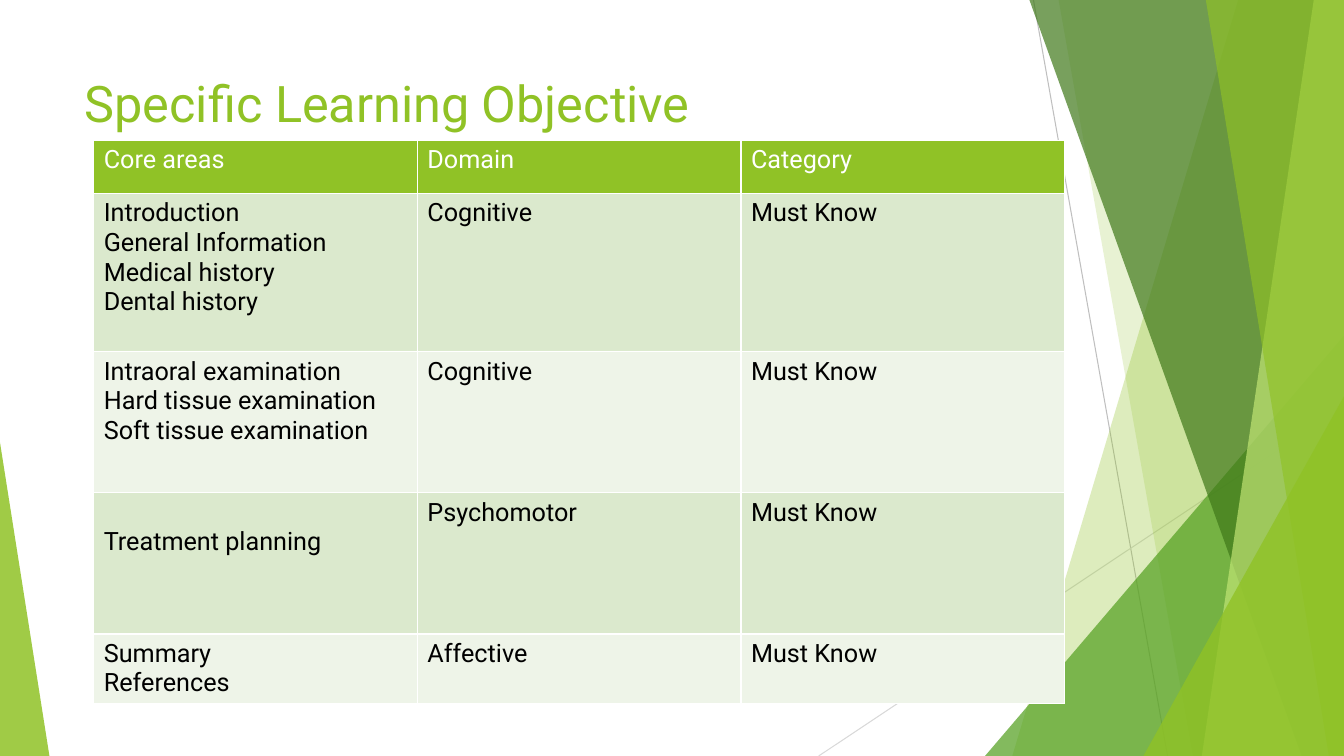
import pptx
import pptx.util
import pptx.dml.color
import pptx.enum.shapes
import pptx.enum.text
import pptx.oxml.ns
import lxml.etree

Inches = pptx.util.Inches
Pt = pptx.util.Pt
WIDTH, HEIGHT = 13.33, 7.5
GREEN, FONT = "90C226", "Roboto"


def color(value):
    return pptx.dml.color.RGBColor.from_string(value)


def paint(facet, fill, opacity):
    facet.shadow.inherit = False
    facet.fill.solid()
    facet.fill.fore_color.rgb = color(fill)
    facet.line.fill.background()
    tint = facet.fill._xPr.find(".//" + pptx.oxml.ns.qn("a:srgbClr"))
    alpha = lxml.etree.SubElement(tint, pptx.oxml.ns.qn("a:alpha"))
    alpha.set("val", str(opacity * 1000))


deck = pptx.Presentation()
deck.slide_width, deck.slide_height = Inches(WIDTH), Inches(HEIGHT)
slide = deck.slides.add_slide(deck.slide_layouts[5])
shapes = slide.shapes

# Thin rays behind the facets
for x1, y1, x2, ray_color in [(10.25, 0, 11.58, "BFBFBF"), (WIDTH, 4.03, 8.12, "D9D9D9")]:
    ray = shapes.add_connector(pptx.enum.shapes.MSO_CONNECTOR.STRAIGHT,
                               Inches(x1), Inches(y1), Inches(x2), Inches(HEIGHT))
    ray.line.color.rgb = color(ray_color)
    ray.line.width = Pt(0.75)
    lxml.etree.SubElement(ray._element.spPr, pptx.oxml.ns.qn("a:effectLst"))

# Facets: a slanted left edge given by its top and bottom x, or a triangle
# given by left, top, width and apex position
facets = [
    ((12.28, 10.04), GREEN, 30),
    ((10.5, 11.83), GREEN, 20),
    ((9.77, 3.33, 3.56, 1), "54A021", 72),
    ((10.21, 12.91), "3F7819", 70),
    ((13.03, 11.92), "C0E474", 70),
    ((11.96, 13.18), GREEN, 65),
    ((11.34, 3.93, 1.99, 1), GREEN, 80),
    ((0, 4.39, 0.49, 0), GREEN, 85),
]
for outline, fill, opacity in facets:
    if len(outline) == 2:
        top_x, bottom_x = outline
        builder = shapes.build_freeform(top_x * 100, 0, scale=Inches(0.01))
        corners = [(WIDTH, 0), (WIDTH, HEIGHT), (bottom_x, HEIGHT)]
        builder.add_line_segments([(x * 100, y * 100) for x, y in corners], close=True)
        facet = builder.convert_to_shape()
    else:
        left, top, width, apex = outline
        facet = shapes.add_shape(pptx.enum.shapes.MSO_SHAPE.ISOSCELES_TRIANGLE, Inches(left),
                                 Inches(top), Inches(width), Inches(HEIGHT - top))
        facet.adjustments[0] = apex
    paint(facet, fill, opacity)

# Title
heading = shapes.title
heading.left, heading.top = Inches(0.74), Inches(0.67)
heading.width, heading.height = Inches(9.4), Inches(1.44)
heading.text_frame.text = "Specific Learning Objective"
heading.text_frame.vertical_anchor = pptx.enum.text.MSO_ANCHOR.TOP
heading_line = heading.text_frame.paragraphs[0]
heading_line.alignment = pptx.enum.text.PP_ALIGN.LEFT
for name, value in {"name": FONT, "size": Pt(36), "bold": False}.items():
    setattr(heading_line.font, name, value)
heading_line.font.color.rgb = color(GREEN)

# Table of objectives: row height, then one text per column
objectives = [
    (0.53, "Core areas", "Domain", "Category"),
    (1.57, "Introduction\nGeneral Information\nMedical history\nDental history",
     "Cognitive", "Must Know"),
    (1.4, "Intraoral examination\nHard tissue examination\nSoft tissue examination",
     "Cognitive", "Must Know"),
    (1.4, "Treatment planning", "Psychomotor", "Must Know"),
    (0.69, "Summary\nReferences", "Affective", "Must Know"),
]
table = shapes.add_table(len(objectives), 3, Inches(0.93), Inches(1.39), Inches(9.63),
                         Inches(sum(row[0] for row in objectives))).table
for r, (row_height, *texts) in enumerate(objectives):
    table.rows[r].height = Inches(row_height)
    row_fill = GREEN if r == 0 else ("EEF4E8", "DBE9CD")[r % 2]
    for c, text in enumerate(texts):
        cell = table.cell(r, c)
        cell.text = text
        cell.fill.solid()
        cell.fill.fore_color.rgb = color(row_fill)
        for line in cell.text_frame.paragraphs:
            for name, value in {"name": FONT, "size": Pt(18), "bold": False}.items():
                setattr(line.font, name, value)
            line.font.color.rgb = color("FFFFFF" if r == 0 else "000000")

# "Treatment planning" sits one line lower than its neighbours
table.cell(3, 0).margin_top = Inches(0.34)

deck.save("out.pptx")
